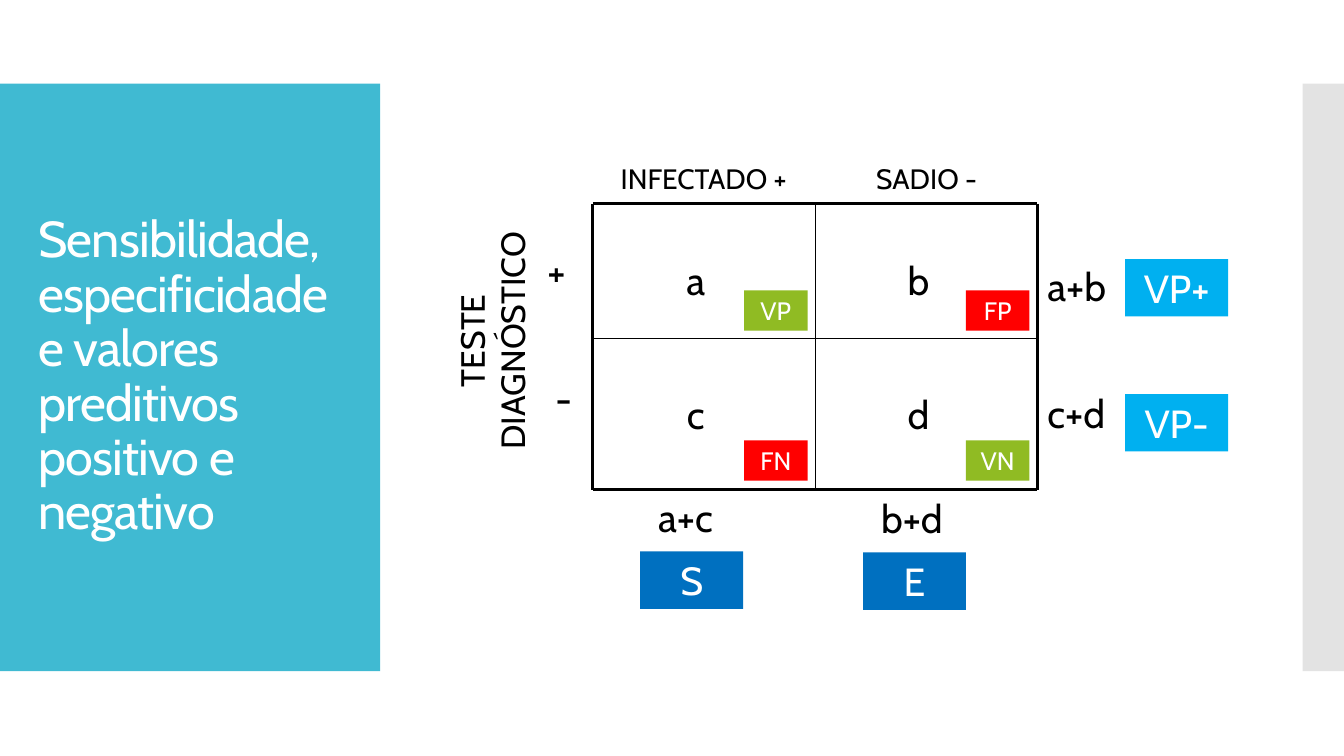
from dataclasses import dataclass

import lxml.etree
import pptx
import pptx.dml.color
import pptx.enum.shapes
import pptx.enum.text
import pptx.oxml.ns
import pptx.util

Inches = pptx.util.Inches
RGBColor = pptx.dml.color.RGBColor
Align = pptx.enum.text.PP_ALIGN

FONT = "Cabin"
BLACK = RGBColor(0x00, 0x00, 0x00)
WHITE = RGBColor(0xFF, 0xFF, 0xFF)
TEAL = RGBColor(0x40, 0xBA, 0xD2)
GRAY = RGBColor(0xC8, 0xC8, 0xC8)
SKY = RGBColor(0x00, 0xB0, 0xF0)
BLUE = RGBColor(0x00, 0x70, 0xC0)
GREEN = RGBColor(0x90, 0xBB, 0x23)
RED = RGBColor(0xFF, 0x00, 0x00)

COLUMN_EDGES = (5.88, 8.09, 10.29)
ROW_EDGES = (2.02, 3.36, 4.86)
CELL_WIDTH = 2.2
LINE_HEIGHT = 0.57


@dataclass(frozen=True)
class Label:
    text: str
    left: float
    top: float
    width: float = 0.94
    height: float = LINE_HEIGHT
    size: float = 28
    align: Align = Align.LEFT
    rotation: float = 0


@dataclass(frozen=True)
class Badge:
    text: str
    left: float
    top: float
    color: RGBColor
    width: float = 1.02
    height: float = LINE_HEIGHT
    size: float = 28


@dataclass(frozen=True)
class Cell:
    letter: str
    column: int
    row: int
    outcome: str
    color: RGBColor


CELLS = (
    Cell("a", 0, 0, "VP", GREEN),
    Cell("b", 1, 0, "FP", RED),
    Cell("c", 0, 1, "FN", RED),
    Cell("d", 1, 1, "VN", GREEN),
)
LETTER_TOPS = (2.49, 3.82)
OUTCOME_LEFTS = (7.38, 9.58)
OUTCOME_TOPS = (2.88, 4.37)

LABELS = (
    Label("TESTE DIAGNÓSTICO", 3.4, 2.93, 2.95, 0.9, 24, Align.CENTER, 270),
    Label("INFECTADO +", COLUMN_EDGES[0], 1.55, CELL_WIDTH, 0.43, 20, Align.CENTER),
    Label("SADIO -", COLUMN_EDGES[1], 1.55, CELL_WIDTH, 0.43, 20, Align.CENTER),
    Label("+", 5.33, 2.4, 0.47),
    Label("-", 5.41, 3.66, 0.39),
    Label("a+b", COLUMN_EDGES[2], 2.55),
    Label("c+d", COLUMN_EDGES[2], 3.81),
    Label("a+c", 6.43, 4.84),
    Label("b+d", 8.64, 4.85),
)
BADGES = (
    Badge("VP+", 11.16, 2.57, SKY),
    Badge("VP-", 11.16, 3.91, SKY),
    Badge("S", 6.35, 5.47, BLUE),
    Badge("E", 8.56, 5.48, BLUE),
)


def write_text(shape, text: str, *, size: float, color: RGBColor = BLACK,
               align: Align = Align.LEFT, line_spacing: float = 1.0,
               tracking: float = 0) -> None:
    """Fill a shape with one vertically centred paragraph; tracking is in points."""
    frame = shape.text_frame
    frame.word_wrap = True
    frame.auto_size = pptx.enum.text.MSO_AUTO_SIZE.NONE
    frame.vertical_anchor = pptx.enum.text.MSO_ANCHOR.MIDDLE
    paragraph = frame.paragraphs[0]
    paragraph.alignment = align
    paragraph.line_spacing = line_spacing
    run = paragraph.add_run()
    run.text = text
    run.font.name = FONT
    run.font.size = pptx.util.Pt(size)
    run.font.color.rgb = color
    if tracking:
        run.font._element.set("spc", str(round(tracking * 100)))


def add_rectangle(slide, left: float, top: float, width: float, height: float,
                  color: RGBColor):
    shape = slide.shapes.add_shape(
        pptx.enum.shapes.MSO_SHAPE.RECTANGLE,
        Inches(left), Inches(top), Inches(width), Inches(height))
    shape.shadow.inherit = False
    shape.fill.solid()
    shape.fill.fore_color.rgb = color
    shape.line.fill.background()
    return shape


def add_label(slide, label: Label) -> None:
    box = slide.shapes.add_textbox(
        Inches(label.left), Inches(label.top), Inches(label.width), Inches(label.height))
    box.rotation = label.rotation
    write_text(box, label.text, size=label.size, align=label.align)


def add_badge(slide, badge: Badge) -> None:
    shape = add_rectangle(
        slide, badge.left, badge.top, badge.width, badge.height, badge.color)
    write_text(shape, badge.text, size=badge.size, color=WHITE, align=Align.CENTER)


def add_line(slide, start: tuple[float, float], end: tuple[float, float],
             weight: float) -> None:
    line = slide.shapes.add_connector(
        pptx.enum.shapes.MSO_CONNECTOR.STRAIGHT,
        *(Inches(value) for value in (*start, *end)))
    line.line.color.rgb = BLACK
    line.line.width = pptx.util.Pt(weight)
    properties = line.element.find(pptx.oxml.ns.qn("p:spPr"))
    lxml.etree.SubElement(properties, pptx.oxml.ns.qn("a:effectLst"))


def add_grid(slide) -> None:
    """Draw the two-by-two grid with thick outer and thin inner lines."""
    weights = (2.25, 1, 2.25)
    for y, weight in zip(ROW_EDGES, weights):
        add_line(slide, (COLUMN_EDGES[0], y), (COLUMN_EDGES[-1], y), weight)
    for x, weight in zip(COLUMN_EDGES, weights):
        add_line(slide, (x, ROW_EDGES[0]), (x, ROW_EDGES[-1]), weight)


def add_cell(slide, cell: Cell) -> None:
    add_label(slide, Label(
        cell.letter, COLUMN_EDGES[cell.column] - 0.08, LETTER_TOPS[cell.row],
        CELL_WIDTH, align=Align.CENTER))
    add_badge(slide, Badge(
        cell.outcome, OUTCOME_LEFTS[cell.column], OUTCOME_TOPS[cell.row],
        cell.color, 0.63, 0.4, 18))


def add_title(slide) -> None:
    """Set the title over the teal panel, with the gray band at the right edge."""
    panel = add_rectangle(slide, 0, 0.83, 3.77, 5.83, TEAL)
    band = add_rectangle(slide, 12.92, 0.83, 0.41, 5.83, GRAY)
    color = band.element.find(".//" + pptx.oxml.ns.qn("a:srgbClr"))
    lxml.etree.SubElement(color, pptx.oxml.ns.qn("a:alpha"), val="50000")

    title = slide.shapes.title
    title.left, title.top = Inches(0.28), Inches(1.23)
    title.width, title.height = Inches(3.22), Inches(5.03)
    write_text(
        title, "Sensibilidade, especificidade e valores preditivos positivo e negativo",
        size=36, color=WHITE, line_spacing=0.9, tracking=-0.6)
    for backdrop in (panel, band):
        title.element.addprevious(backdrop.element)


def main() -> None:
    presentation = pptx.Presentation()
    presentation.slide_width = Inches(13.33)
    presentation.slide_height = Inches(7.5)
    slide = presentation.slides.add_slide(presentation.slide_layouts.get_by_name("Title Only"))
    add_title(slide)
    add_grid(slide)
    for label in LABELS:
        add_label(slide, label)
    for cell in CELLS:
        add_cell(slide, cell)
    for badge in BADGES:
        add_badge(slide, badge)
    presentation.save("out.pptx")


if __name__ == "__main__":
    main()
